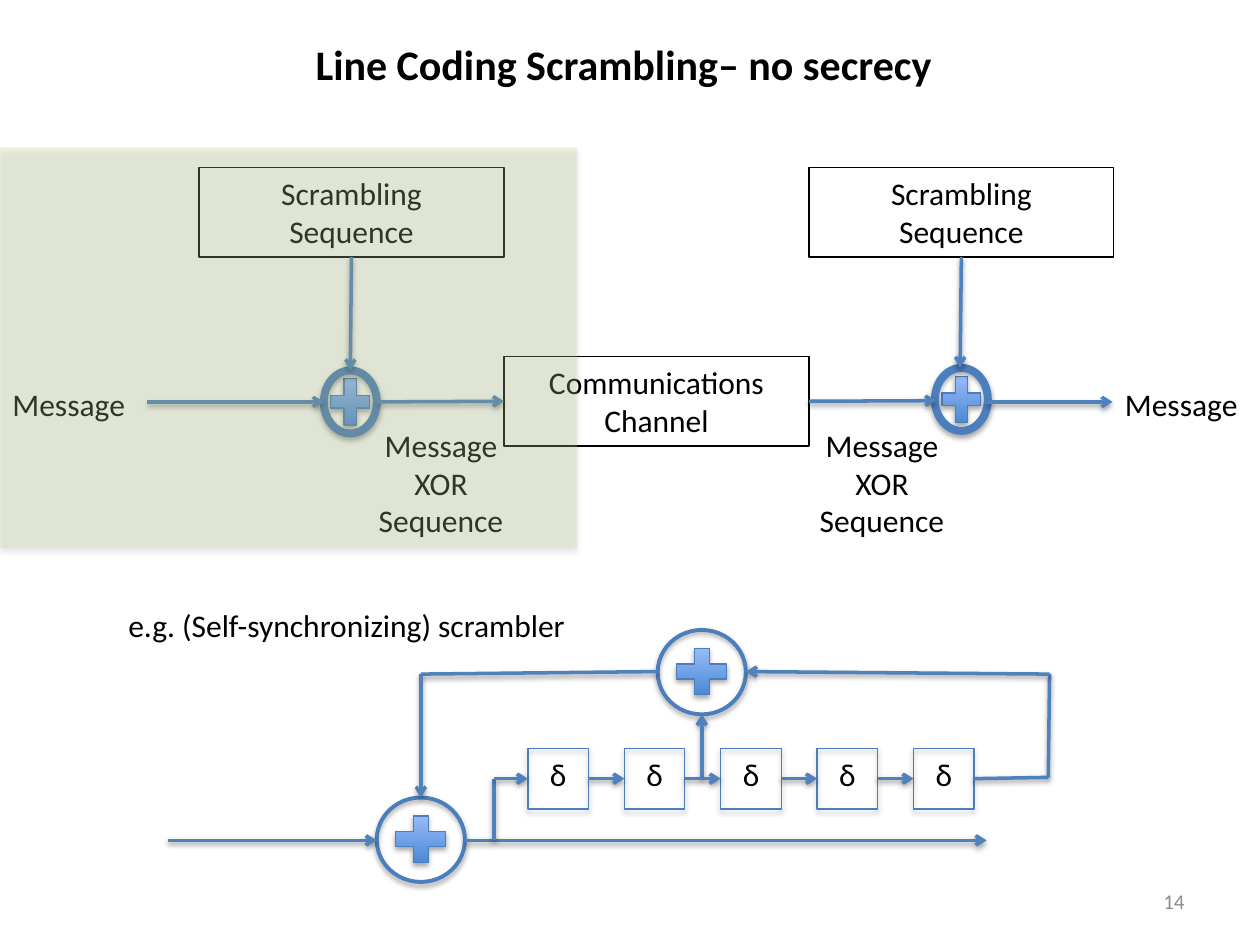
import pptx
import pptx.util
import pptx.dml.color
import pptx.enum.shapes
import pptx.enum.text
import pptx.oxml
import pptx.oxml.ns

Inches, Pt = pptx.util.Inches, pptx.util.Pt
Rgb = pptx.dml.color.RGBColor.from_string
Kind = pptx.enum.shapes.MSO_SHAPE
Align = pptx.enum.text.PP_ALIGN
Anchor = pptx.enum.text.MSO_ANCHOR
qn = pptx.oxml.ns.qn
NS = 'xmlns:a="http://schemas.openxmlformats.org/drawingml/2006/main"'
THEME = {
    "font": "Calibri", "ink": "000000", "gray": "8C8C8C", "veil": "C3D69B",
    "edge": "4B7EBC", "wire": "4F81BD", "low": "3F80CE", "high": "A4C4FF",
    "title": 24, "body": 18, "small": 12,
}

deck = pptx.Presentation()
deck.slide_width, deck.slide_height = Inches(10), Inches(7.5)
slide = deck.slides.add_slide(deck.slide_layouts[6])
soft = []


def draw(kind, x, y, w, h, edge=None, width=0.75):
    shape = slide.shapes.add_shape(kind, Inches(x), Inches(y), Inches(w), Inches(h))
    shape.shadow.inherit = False
    shape.fill.background()
    if edge:
        shape.line.color.rgb = Rgb(THEME[edge])
        shape.line.width = Pt(width)
    else:
        shape.line.fill.background()
    return shape


def write(shape, lines, align=Align.CENTER, size="body", ink="ink", bold=False, anchor=Anchor.TOP):
    frame = shape.text_frame
    frame.word_wrap = True
    frame.vertical_anchor = anchor
    for i, line in enumerate(lines):
        para = frame.paragraphs[0] if i == 0 else frame.add_paragraph()
        para.alignment = align
        run = para.add_run()
        run.text = line
        run.font.name = THEME["font"]
        run.font.size = Pt(THEME[size])
        run.font.bold = bold
        run.font.color.rgb = Rgb(THEME[ink])


title = slide.shapes.add_textbox(Inches(1.99), Inches(0.26), Inches(5.92), Inches(0.5))
write(title, ["Line Coding Scrambling– no secrecy"], size="title", bold=True)

boxes = []
for x, y, lines in [
    (1.58, 1.33, ["Scrambling", "Sequence"]),
    (6.42, 1.33, ["Scrambling", "Sequence"]),
    (4, 2.83, ["Communications", "Channel"]),
]:
    box = draw(Kind.RECTANGLE, x, y, 2.42, 0.71, "ink")
    write(box, lines)
    boxes.append(box)
left, right, link = boxes

top_wires = [
    ((1.17, 3.19), (2.57, 3.19), True, None, None),
    ((2.99, 3.19), (4, 3.19), True, None, (link, 1)),
    ((6.42, 3.19), (7.43, 3.18), True, (link, 3), None),
    ((7.82, 3.19), (8.83, 3.19), True, None, None),
    ((2.79, 2.04), (2.78, 2.94), True, (left, 2), None),
    ((7.62, 2.04), (7.62, 2.92), True, (right, 2), None),
]
adders = [
    (2.57, 2.94, 0.42, 0.5, 0, 0, 4.5),
    (7.42, 2.92, 0.42, 0.5, 0, 0, 4.5),
    (5.22, 5, 0.7, 0.67, 0.08, 0.08, 2.25),
    (2.99, 6.33, 0.7, 0.67, 0.08, 0.08, 2.25),
]
low_wires = [
    ((3.69, 6.67), (7.83, 6.67), True, None, None),
    ((1.33, 6.67), (2.99, 6.67), True, None, None),
    ((5.57, 6.18), (5.57, 5.67), True, None, None),
    ((8.32, 6.17), (8.33, 5.35), False, None, None),
    ((8.33, 5.35), (5.92, 5.33), True, None, None),
    ((5.22, 5.33), (3.34, 5.35), False, None, None),
    ((3.34, 5.35), (3.34, 6.33), True, None, None),
    ((3.92, 6.67), (3.92, 6.18), False, None, None),
]
notes = [
    (0, 3.01, 1.42, 0.4, ["Message"], Align.LEFT),
    (8.83, 3.01, 1.17, 0.4, ["Message"], Align.LEFT),
    (2.66, 3.33, 1.68, 1.01, ["Message", "XOR", "Sequence"], Align.CENTER),
    (6.16, 3.33, 1.68, 1.01, ["Message", "XOR", "Sequence"], Align.CENTER),
    (0.92, 4.76, 3.89, 0.4, ["e.g. (Self-synchronizing) scrambler"], Align.LEFT),
]

for x, y, w, h, dx, dy, width in adders:
    plus = draw(Kind.MATH_PLUS, x + dx, y + dy, w - 2 * dx, 0.5, "edge")
    plus.fill.gradient()
    plus.fill.gradient_angle = 90
    for stop, tone in zip(plus.fill.gradient_stops, ("low", "high")):
        stop.color.rgb = Rgb(THEME[tone])
    ring = draw(Kind.OVAL, x, y, w, h, "edge", width)
    soft += [(plus, 35, 1.8), (ring, 35, 1.8)]

cells = []
for i in range(5):
    x = 4.19 + 0.765 * i
    cell = draw(Kind.RECTANGLE, x, 5.94, 0.48, 0.48, "edge")
    soft.append((cell, 35, 1.8))
    cells.append(cell)
    mark = slide.shapes.add_textbox(Inches(x), Inches(5.94), Inches(0.48), Inches(0.4))
    write(mark, ["δ"])

for i, (prev, cell) in enumerate(zip(cells, cells[1:])):
    x = 4.67 + 0.765 * i
    low_wires.append(((x, 6.18), (x + 0.28, 6.18), True, (prev, 3), (cell, 1)))
low_wires.append(((3.92, 6.18), (4.19, 6.18), True, None, (cells[0], 1)))
low_wires.append(((7.73, 6.18), (8.32, 6.17), False, (cells[-1], 3), None))

for start, end, arrow, tail, head in top_wires + low_wires:
    wire = slide.shapes.add_connector(
        pptx.enum.shapes.MSO_CONNECTOR.STRAIGHT, *map(Inches, start + end))
    if tail:
        wire.begin_connect(*tail)
    if head:
        wire.end_connect(*head)
    wire.line.color.rgb = Rgb(THEME["wire"])
    wire.line.width = Pt(2)
    if arrow:
        wire.line._get_or_add_ln().append(
            pptx.oxml.parse_xml(f'<a:tailEnd {NS} type="arrow"/>'))
    soft.append((wire, 38, 1.6))

for x, y, w, h, lines, align in notes:
    note = slide.shapes.add_textbox(Inches(x), Inches(y), Inches(w), Inches(h))
    write(note, lines, align)

veil = draw(Kind.RECTANGLE, 0, 1.17, 4.58, 3.18)
veil.fill.solid()
veil.fill.fore_color.rgb = Rgb(THEME["veil"])
tint = veil._element.spPr.find(qn("a:solidFill"))[0]
tint.append(pptx.oxml.parse_xml(f'<a:alpha {NS} val="25000"/>'))
soft.append((veil, 35, 1.8))

for item, alpha, drop in soft:
    props = item._element.spPr
    for old in props.findall(qn("a:effectLst")):
        props.remove(old)
    props.append(pptx.oxml.parse_xml(
        f'<a:effectLst {NS}><a:outerShdw blurRad="{Pt(3.1)}" dist="{Pt(drop)}" dir="5400000" '
        f'rotWithShape="0"><a:srgbClr val="{THEME["ink"]}"><a:alpha val="{alpha * 1000}"/>'
        '</a:srgbClr></a:outerShdw></a:effectLst>'))

page = slide.shapes.add_textbox(Inches(7.17), Inches(6.95), Inches(2.33), Inches(0.4))
write(page, ["14"], Align.RIGHT, "small", "gray", anchor=Anchor.MIDDLE)

deck.save("out.pptx")
